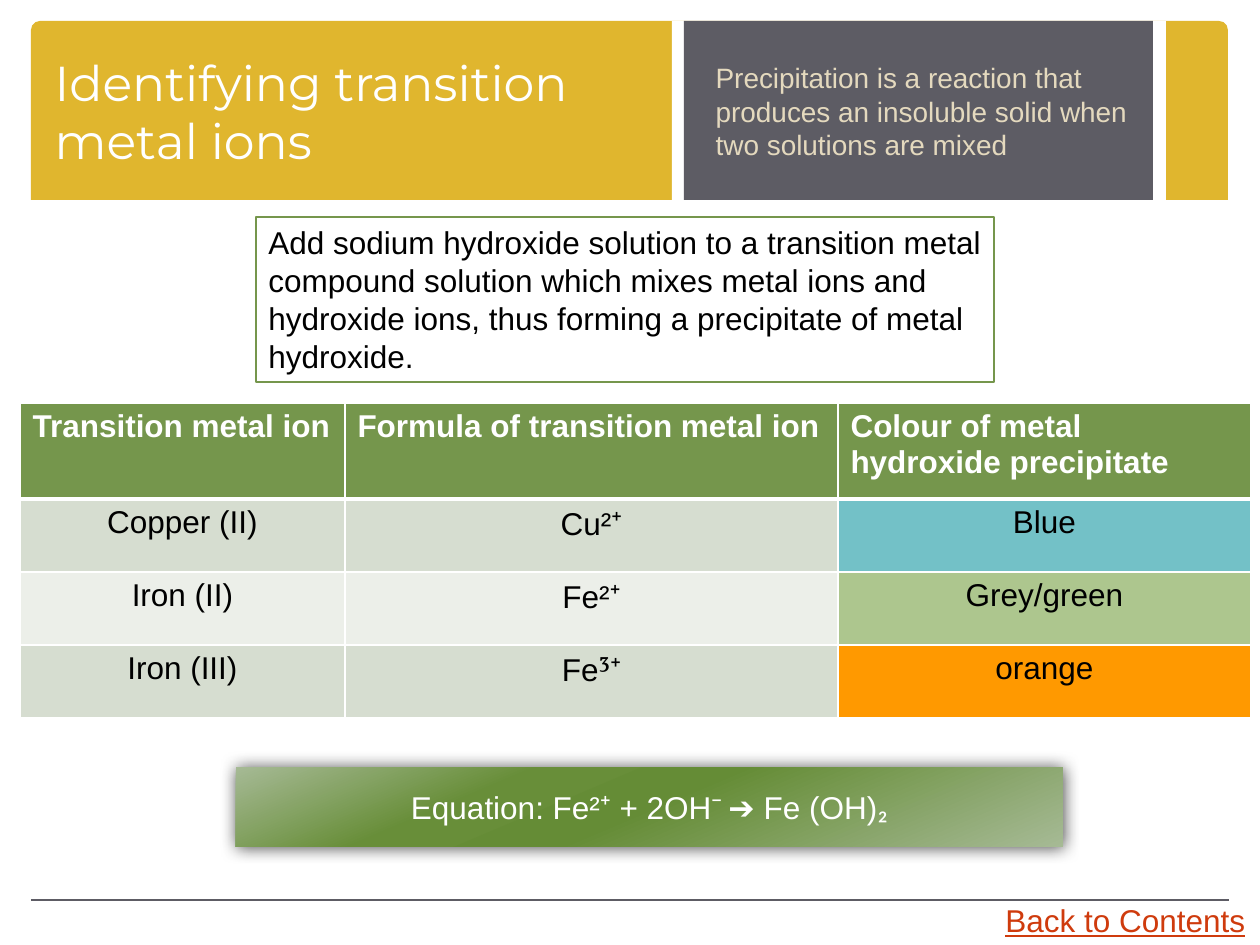
"""Build the slide on identifying transition metal ions."""
from typing import NamedTuple

from lxml import etree
from pptx import Presentation
from pptx import util as u
from pptx.dml.color import RGBColor
from pptx.enum import shapes, text
from pptx.oxml.ns import qn

PX = 914400 / 126
GREEN, WHITE, BLACK, GREY, GOLD = "75964C", "FFFFFF", "000000", "5D5C64", "E0B62E"
BODY, SIGN = "Arial", "Vollkorn"


class Box(NamedTuple):
    left: int
    top: int
    width: int
    height: int


class Span(NamedTuple):
    text: str
    font: str = BODY


class Style(NamedTuple):
    size: int = 18
    color: str = BLACK
    bold: bool = False
    underline: bool = False
    align: text.PP_ALIGN = text.PP_ALIGN.LEFT


class Panel(NamedTuple):
    kind: shapes.MSO_SHAPE
    box: Box
    fill: str


class Row(NamedTuple):
    ion: str
    formula: tuple[Span, ...]
    precipitate: str
    band: str
    color: str


PANELS = (
    Panel(shapes.MSO_SHAPE.ROUND_2_SAME_RECTANGLE, Box(31, 21, 1197, 179), GOLD),
    Panel(shapes.MSO_SHAPE.RECTANGLE, Box(672, 21, 494, 179), WHITE),
    Panel(shapes.MSO_SHAPE.RECTANGLE, Box(684, 21, 469, 179), GREY),
)
HEADERS = ("Transition metal ion", "Formula of transition metal ion",
           "Colour of metal hydroxide precipitate")
ROWS = (
    Row("Copper (II)", (Span("Cu²"), Span("⁺", SIGN)), "Blue", "D6DDD0", "73C1C7"),
    Row("Iron (II)", (Span("Fe²"), Span("⁺", SIGN)), "Grey/green", "ECEFE9", "ADC68E"),
    Row("Iron (III)", (Span("Fe"), Span("³⁺", SIGN)), "orange", "D6DDD0", "FF9900"),
)
COLUMN_WIDTHS = (325, 493, 413)
ROW_HEIGHTS = (96, 73, 73, 73)
EQUATION = (Span("Equation: Fe²"), Span("⁺", SIGN), Span(" + 2OH"), Span("⁻ ", SIGN),
            Span("➔ Fe (OH)"), Span("₂", "Calibri"))
GRADIENT = ((0, "A6BA95"), (30, "688E39"), (50, "658C36"), (100, "A6BA95"))


def px(value: int) -> int:
    """Turn pixels into EMU."""
    return round(value * PX)


def rgb(color: str) -> RGBColor:
    """Turn a hex string into a colour."""
    return RGBColor.from_string(color)


def place(box: Box) -> list[int]:
    """Give a box in EMU."""
    return [px(value) for value in box]


def child(parent, tag: str, **attributes):
    """Append an XML element."""
    return etree.SubElement(parent, qn(tag), attributes)


def write(frame, spans: tuple[Span, ...], style: Style) -> None:
    """Write one paragraph of formatted spans."""
    para = frame.paragraphs[0]
    para.alignment = style.align
    for span in spans:
        run = para.add_run()
        run.text = span.text
        font = run.font
        font.name, font.size = span.font, u.Pt(style.size)
        font.color.rgb = rgb(style.color)
        font.bold, font.underline = style.bold, style.underline


def add_panel(page, panel: Panel):
    """Draw a filled shape without outline or shadow."""
    shape = page.shapes.add_shape(panel.kind, *place(panel.box))
    shape.shadow.inherit = False
    shape.fill.solid()
    shape.fill.fore_color.rgb = rgb(panel.fill)
    shape.line.fill.background()
    return shape


def fill_placeholder(page, holder, box: Box, span: Span, style: Style) -> None:
    """Move a placeholder above the panels and fill it."""
    page.shapes._spTree.append(holder._element)
    holder.left, holder.top, holder.width, holder.height = place(box)
    frame = holder.text_frame
    frame.auto_size = text.MSO_AUTO_SIZE.NONE
    frame.vertical_anchor = text.MSO_ANCHOR.MIDDLE
    write(frame, (span,), style)
    properties = frame.paragraphs[0]._p.get_or_add_pPr()
    properties.set("marL", "0")
    properties.set("indent", "0")
    child(properties, "a:buNone")


def add_rule(page) -> None:
    """Draw the line at the foot."""
    ends = [px(value) for value in (31, 900, 1229, 900)]
    rule = page.shapes.add_connector(shapes.MSO_CONNECTOR.STRAIGHT, *ends)
    rule.line.color.rgb = rgb(GREY)
    rule.line.width = u.Pt(1)
    child(rule._element.spPr, "a:effectLst")


def fill_cell(cell, spans: tuple[Span, ...], style: Style, fill: str, bottom: int) -> None:
    """Write a cell with white borders and a fill."""
    write(cell.text_frame, spans, style)
    properties = cell._tc.get_or_add_tcPr()
    for side, width in (("L", 1), ("R", 1), ("T", 1), ("B", bottom)):
        line = child(properties, f"a:ln{side}", w=str(u.Pt(width)))
        child(child(line, "a:solidFill"), "a:srgbClr", val=WHITE)
    cell.fill.solid()
    cell.fill.fore_color.rgb = rgb(fill)


def add_ion_table(page) -> None:
    """Draw the table of ions and precipitates."""
    box = Box(20, 403, sum(COLUMN_WIDTHS), sum(ROW_HEIGHTS))
    table = page.shapes.add_table(len(ROW_HEIGHTS), len(COLUMN_WIDTHS), *place(box)).table
    for column, width in zip(table.columns, COLUMN_WIDTHS):
        column.width = px(width)
    for row, height in zip(table.rows, ROW_HEIGHTS):
        row.height = px(height)
    for column, header in enumerate(HEADERS):
        fill_cell(table.cell(0, column), (Span(header),), Style(color=WHITE, bold=True), GREEN, 3)
    centred = Style(align=text.PP_ALIGN.CENTER)
    for index, row in enumerate(ROWS, 1):
        contents = ((Span(row.ion),), row.formula, (Span(row.precipitate),))
        fills = (row.band, row.band, row.color)
        for column, (spans, fill) in enumerate(zip(contents, fills)):
            fill_cell(table.cell(index, column), spans, centred, fill, 1)


def add_equation(page) -> None:
    """Draw the equation on a gradient bar with a soft shadow."""
    bar = add_panel(page, Panel(shapes.MSO_SHAPE.RECTANGLE, Box(236, 767, 827, 80), GREEN))
    bar.fill.gradient()
    bar.fill.gradient_angle = 293
    stops = bar._element.spPr.find(".//" + qn("a:gsLst"))
    for stop in list(stops):
        stops.remove(stop)
    for position, color in GRADIENT:
        child(child(stops, "a:gs", pos=str(position * 1000)), "a:srgbClr", val=color)
    effects = bar._element.spPr.find(qn("a:effectLst"))
    shadow = child(effects, "a:outerShdw", blurRad=str(u.Pt(9.4)), dist="0", dir="0")
    child(child(shadow, "a:srgbClr", val=BLACK), "a:alpha", val="70000")
    bar.text_frame.vertical_anchor = text.MSO_ANCHOR.MIDDLE
    write(bar.text_frame, EQUATION, Style(color=WHITE, align=text.PP_ALIGN.CENTER))


def add_method(page) -> None:
    """Draw the outlined description of the test."""
    note = add_panel(page, Panel(shapes.MSO_SHAPE.RECTANGLE, Box(256, 217, 738, 165), WHITE))
    note.line.color.rgb = rgb(GREEN)
    note.line.width = u.Pt(1.5)
    note.text_frame.vertical_anchor = text.MSO_ANCHOR.TOP
    write(note.text_frame, (Span(
        "Add sodium hydroxide solution to a transition metal compound solution which mixes "
        "metal ions and hydroxide ions, thus forming a precipitate of metal hydroxide."),), Style())


def main() -> None:
    """Build and save the deck."""
    deck = Presentation()
    deck.slide_width, deck.slide_height = px(1260), px(945)
    page = deck.slides.add_slide(deck.slide_layouts[1])
    title, body = page.placeholders
    header = [add_panel(page, panel) for panel in PANELS]
    header[0].adjustments[0] = 0.05
    add_rule(page)
    fill_placeholder(page, title, Box(42, 32, 620, 158),
                     Span("Identifying transition metal ions", "Montserrat"), Style(28, WHITE))
    add_ion_table(page)
    fill_placeholder(page, body, Box(703, 32, 441, 158), Span(
        "Precipitation is a reaction that produces an insoluble solid when two solutions "
        "are mixed"), Style(16, "E4D9BE"))
    contents = page.shapes.add_textbox(*place(Box(993, 895, 267, 50)))
    contents.text_frame.word_wrap = False
    write(contents.text_frame, (Span("Back to Contents"),), Style(color="CF3B0D", underline=True))
    add_equation(page)
    add_method(page)
    deck.save("out.pptx")


if __name__ == "__main__":
    main()
